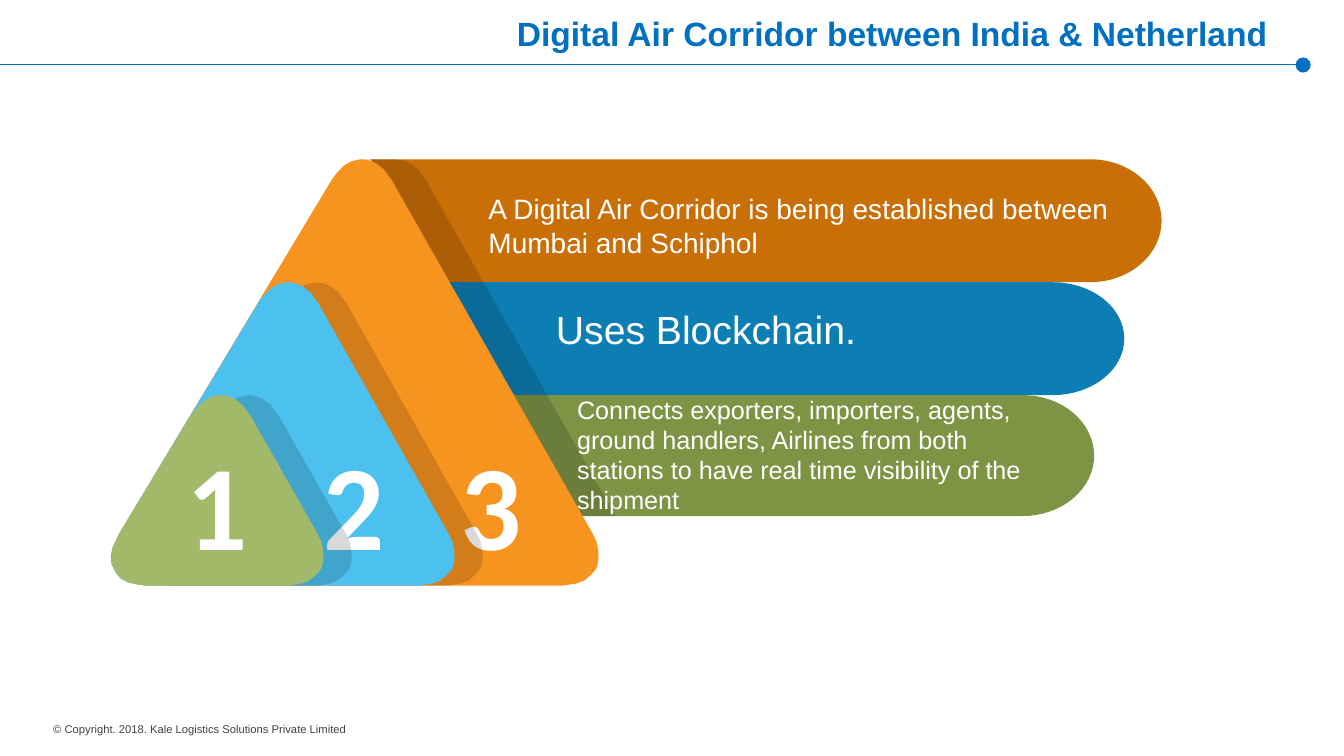
"""Build the Digital Air Corridor slide with nested triangles and labelled bars."""
from math import cos, pi, sin
from typing import NamedTuple

from lxml import etree
from pptx import Presentation
from pptx import util as u
from pptx.dml.color import RGBColor
from pptx.enum import shapes, text
from pptx.oxml import ns

WHITE = RGBColor(0xFF, 0xFF, 0xFF)
BLACK = RGBColor(0, 0, 0)
GREY = RGBColor(0x40, 0x40, 0x40)
TITLE_BLUE = RGBColor(0x00, 0x70, 0xC0)
DARK_BLUE = RGBColor(0x0D, 0x7E, 0xB3)
DARK_ORANGE = RGBColor(0xC9, 0x6F, 0x07)
DARK_GREEN = RGBColor(0x7E, 0x94, 0x45)
ORANGE = RGBColor(0xF7, 0x93, 0x1F)
SKY = RGBColor(0x4C, 0xC1, 0xEF)
GREEN = RGBColor(0xA2, 0xB9, 0x69)

Point = tuple[float, float]
Box = tuple[float, float, float, float]

BASE_LEFT, BASE_Y = 1.1, 5.81
LEFT_CORNER = [(.36, 0), (.28, -.01), (.18, -.03), (.1, -.07), (.05, -.13),
               (.01, -.21), (0, -.29), (.02, -.38), (.08, -.51)]
APEX = [(-.32, .21), (-.27, .14), (-.19, .06), (-.12, .02), (-.03, 0),
        (.05, .01), (.12, .04), (.2, .1), (.28, .21)]
RIGHT_CORNER = [(-.06, -.52), (-.02, -.44), (0, -.34), (0, -.25), (-.02, -.17),
                (-.07, -.11), (-.14, -.05), (-.22, -.02), (-.36, 0)]
CAP_WIDTH = .71
SHADOW_SHIFT = .28
BAND_SHIFT = .34


class Bar(NamedTuple):
    top: float
    bottom: float
    left_top: float
    left_bottom: float
    cap_x: float
    color: RGBColor
    label: str
    size: float
    box: Box


class Triangle(NamedTuple):
    number: str
    apex_x: float
    top: float
    right: float
    color: RGBColor
    number_x: float


BARS = [
    Bar(1.58, 2.8, 3.68, 4.4, 10.82, DARK_ORANGE,
        "A Digital Air Corridor is being established between Mumbai and Schiphol",
        20, (4.75, 1.85, 6.4, .77)),
    Bar(2.8, 3.92, 4.03, 4.97, 10.45, DARK_BLUE,
        "Uses Blockchain.", 28, (5.42, 2.98, 5.73, .57)),
    Bar(3.92, 5.12, 4.67, 5.67, 10.15, DARK_GREEN,
        "Connects exporters, importers, agents, ground handlers, Airlines from both "
        "stations to have real time visibility of the shipment",
        18, (5.63, 3.86, 4.94, 1.31)),
]
TRIANGLES = [
    Triangle("3", 3.61, 1.58, 5.94, ORANGE, 4.38),
    Triangle("2", 2.88, 2.8, 4.51, SKY, 3.02),
    Triangle("1", 2.21, 3.92, 3.21, GREEN, 1.66),
]


def shift(points: list[Point], dx: float, dy: float = 0) -> list[Point]:
    return [(x + dx, y + dy) for x, y in points]


def add_outline(sl, points: list[Point], color: RGBColor, alpha: int = 100) -> None:
    emu = [(u.Inches(x), u.Inches(y)) for x, y in points]
    fb = sl.shapes.build_freeform(*emu[0])
    fb.add_line_segments(emu[1:], close=True)
    s = fb.convert_to_shape()
    s.shadow.inherit = False
    s.fill.solid()
    s.fill.fore_color.rgb = color
    s.line.fill.background()
    if alpha < 100:
        clr = s.element.spPr.find(".//" + ns.qn("a:srgbClr"))
        etree.SubElement(clr, ns.qn("a:alpha")).set("val", str(alpha * 1000))


def add_text(sl, content: str, box: Box, *, size: float, color: RGBColor = WHITE,
             font: str = "Arial", bold: bool = False, wrap: bool = True,
             align=text.PP_ALIGN.LEFT, anchor=text.MSO_ANCHOR.TOP) -> None:
    tf = sl.shapes.add_textbox(*map(u.Inches, box)).text_frame
    tf.word_wrap = wrap
    tf.vertical_anchor = anchor
    p = tf.paragraphs[0]
    p.alignment = align
    r = p.add_run()
    r.text = content
    r.font.name, r.font.size, r.font.bold = font, u.Pt(size), bold
    r.font.color.rgb = color


def add_header(sl) -> None:
    y = u.Inches(.64)
    s = sl.shapes.add_connector(shapes.MSO_CONNECTOR.STRAIGHT, 0, y, u.Inches(12.86), y)
    s.line.color.rgb = TITLE_BLUE
    s.line.width = u.Pt(.75)
    etree.SubElement(s.element.spPr, ns.qn("a:effectLst"))
    s = sl.shapes.add_shape(shapes.MSO_SHAPE.OVAL, *map(u.Inches, (12.86, .57, .15, .15)))
    s.shadow.inherit = False
    s.fill.solid()
    s.fill.fore_color.rgb = TITLE_BLUE
    s.line.fill.background()
    add_text(sl, "Digital Air Corridor between India & Netherland", (1.75, .05, 10.93, .55),
             size=24, color=TITLE_BLUE, bold=True, align=text.PP_ALIGN.RIGHT,
             anchor=text.MSO_ANCHOR.MIDDLE)


def add_bar(sl, bar: Bar) -> None:
    mid, radius = (bar.top + bar.bottom) / 2, (bar.bottom - bar.top) / 2
    angles = [pi * i / 32 - pi / 2 for i in range(33)]
    cap = [(bar.cap_x + CAP_WIDTH * cos(a), mid + radius * sin(a)) for a in angles]
    add_outline(sl, [(bar.left_top, bar.top), *cap, (bar.left_bottom, bar.bottom)], bar.color)


def add_triangle(sl, tri: Triangle) -> None:
    apex = shift(APEX, tri.apex_x, tri.top)
    outline = (shift(LEFT_CORNER, BASE_LEFT, BASE_Y) + apex
               + shift(RIGHT_CORNER, tri.right, BASE_Y))
    if tri is TRIANGLES[0]:
        edge = apex[4:] + [(5.77, BARS[-1].bottom)]
        shadow = shift(edge, BAND_SHIFT) + edge[::-1]
    else:
        shadow = shift(outline, SHADOW_SHIFT)
    add_outline(sl, shadow, BLACK, alpha=15)
    add_outline(sl, outline, tri.color)
    add_text(sl, tri.number, (tri.number_x, 3.86, .99, 1.89), size=86.2, font="Calibri",
             bold=True, wrap=False, align=text.PP_ALIGN.CENTER,
             anchor=text.MSO_ANCHOR.BOTTOM)


def main() -> None:
    prs = Presentation()
    prs.slide_width, prs.slide_height = u.Inches(13.34), u.Inches(7.5)
    sl = prs.slides.add_slide(prs.slide_layouts[6])
    add_text(sl, "© Copyright. 2018. Kale Logistics Solutions Private Limited",
             (.43, 7.07, 6.11, .33), size=8, color=GREY, anchor=text.MSO_ANCHOR.MIDDLE)
    add_header(sl)
    for bar in BARS:
        add_bar(sl, bar)
    for tri in TRIANGLES:
        add_triangle(sl, tri)
    for bar in BARS:
        add_text(sl, bar.label, bar.box, size=bar.size)
    prs.save("out.pptx")


if __name__ == "__main__":
    main()
